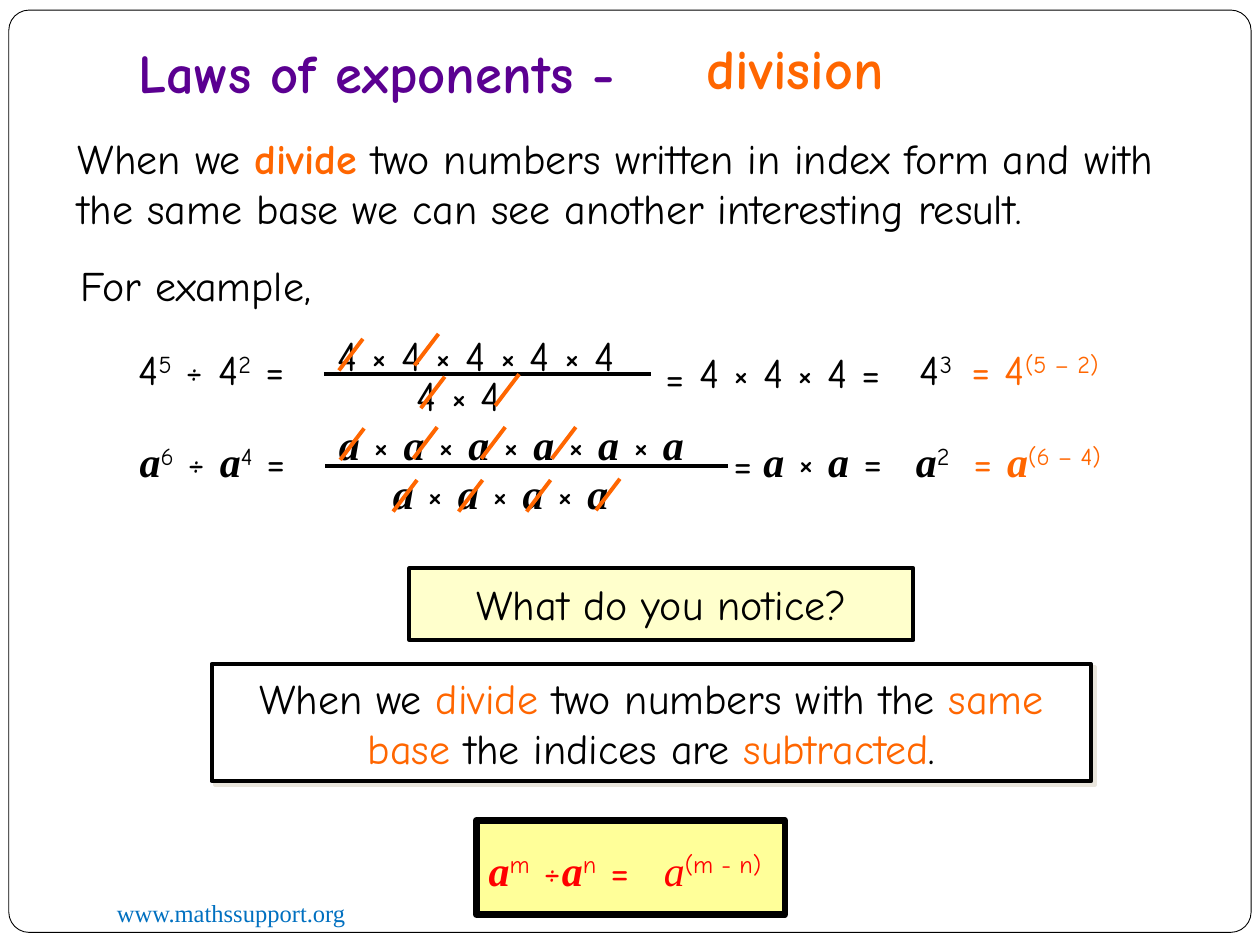
from lxml.etree import SubElement
from pptx import Presentation
from pptx.dml.color import RGBColor
from pptx.enum.shapes import MSO_CONNECTOR, MSO_SHAPE
from pptx.enum.text import MSO_ANCHOR, MSO_AUTO_SIZE, PP_ALIGN
from pptx.oxml.ns import qn
from pptx.util import Inches, Pt

BLACK = RGBColor(0x00, 0x00, 0x00)
WHITE = RGBColor(0xFF, 0xFF, 0xFF)
ORANGE = RGBColor(0xFF, 0x66, 0x00)
PURPLE = RGBColor(0x5B, 0x00, 0x91)
BLUE = RGBColor(0x00, 0x70, 0xC0)
RED = RGBColor(0xFF, 0x00, 0x00)
CREAM = RGBColor(0xFF, 0xFF, 0xCC)
YELLOW = RGBColor(0xFF, 0xFF, 0x99)
SANS, SERIF = "Comic Neue", "Times New Roman"


def add_run(par, text, color=BLACK, size=24, bold=False, face=SANS):
    run = par.add_run()
    run.text = text
    font = run.font
    font.name, font.size, font.bold = face, Pt(size), bold
    font.color.rgb = color
    return run


def add_math(par, code, color, bold=True):
    """Split code at | into runs: ^ raises a part, a lone a is a variable."""
    for part in code.split("|"):
        run = add_run(par, part.lstrip("^"), color)
        if part.startswith("^"):
            run.font._element.set("baseline", "30000")
        elif part == "a":
            run.font.name, run.font.italic, run.font.bold = SERIF, True, bold


prs = Presentation()
prs.slide_width, prs.slide_height = Inches(10), Inches(7.5)
slide = prs.slides.add_slide(prs.slide_layouts[5])
shapes = slide.shapes

# Title
title = shapes.title
title.left, title.top = Inches(1), Inches(0.3)
title.width, title.height = Inches(8.5), Inches(0.65)
frame = title.text_frame
frame.auto_size = MSO_AUTO_SIZE.NONE
frame.vertical_anchor = MSO_ANCHOR.MIDDLE
frame.margin_bottom = Inches(0.1)
par = frame.paragraphs[0]
par.alignment, par.line_spacing = PP_ALIGN.LEFT, 0.9
add_run(par, "Laws of exponents -", PURPLE, 31.2, True)

# Panels: kind, left, top, width, height, fill, line width, runs
panels = [
    (MSO_SHAPE.ROUNDED_RECTANGLE, 0.07, 0.08, 9.86, 7.32, WHITE, 0.5, []),
    (MSO_SHAPE.RECTANGLE, 3.25, 4.51, 4, 0.57, CREAM, 2.25,
     [("What do you notice?", BLACK)]),
    (MSO_SHAPE.RECTANGLE, 1.68, 5.27, 6.98, 0.93, WHITE, 2.25,
     [("When we ", BLACK), ("divide", ORANGE),
      (" two numbers with the ", BLACK), ("same base", ORANGE),
      (" the indices are ", BLACK), ("subtracted", ORANGE), (".", BLACK)]),
    (MSO_SHAPE.RECTANGLE, 3.78, 6.51, 2.45, 0.75, YELLOW, 3.75, []),
]
boxes = []
for kind, left, top, width, height, fill, line, runs in panels:
    box = shapes.add_shape(kind, Inches(left), Inches(top),
                           Inches(width), Inches(height))
    box.shadow.inherit = False
    box.fill.solid()
    box.fill.fore_color.rgb = fill
    box.line.color.rgb = BLACK
    box.line.width = Pt(line)
    par = box.text_frame.paragraphs[0]
    par.alignment = PP_ALIGN.CENTER
    for text, color in runs:
        add_run(par, text, color)
    boxes.append(box)

border, ask, law, rule = boxes
border.adjustments[0] = 0.022
title._element.addprevious(border._element)
shade = SubElement(law._element.spPr.find(qn("a:effectLst")),
                   qn("a:outerShdw"), blurRad="0", dist=str(Pt(2.8)),
                   dir="2700000", algn="ctr", rotWithShape="0")
SubElement(shade, qn("a:srgbClr"), val="E9E5DC")

# Plain text: left, top, width, height, wrap, runs
notes = [
    (0.83, 7.08, 3.25, 0.34, True,
     [("www.mathssupport.org", BLUE, 14, False, SERIF)]),
    (5.51, 0.22, 3.4, 0.64, True, [("division", ORANGE, 32, True)]),
    (0.52, 1, 9.27, 0.91, True,
     [("When we ",), ("divide", ORANGE, 24, True),
      (" two numbers written in index form and with the same base"
       " we can see another interesting result.",)]),
    (0.54, 2.01, 2.21, 0.5, False, [("For example,",)]),
]
for left, top, width, height, wrap, runs in notes:
    box = shapes.add_textbox(Inches(left), Inches(top),
                             Inches(width), Inches(height))
    box.text_frame.word_wrap = wrap
    for run in runs:
        add_run(box.text_frame.paragraphs[0], *run)

# Maths: left, top, width, code, colour
times = "| × |"
terms = [
    (1, 2.68, 1.52, "4|^5| ÷ 4|^2| =", BLACK),
    (2.58, 2.57, 2.67, " × ".join("4" * 5), BLACK),
    (3.21, 2.88, 0.97, "4 × 4", BLACK),
    (5.18, 2.73, 0.37, "=", BLACK),
    (5.45, 2.7, 1.81, "4 × 4 × 4 =", BLACK),
    (7.2, 2.68, 0.54, "4|^3", BLACK),
    (7.61, 2.68, 1.35, "= 4|^(5 – 2)", ORANGE),
    (1.01, 3.41, 1.44, "a|^6| ÷ |a|^4| =", BLACK),
    (2.59, 3.27, 3.09, times.join("a" * 6), BLACK),
    (3.02, 3.66, 1.99, times.join("a" * 4), BLACK),
    (5.72, 3.42, 0.37, "=", BLACK),
    (5.96, 3.41, 1.17, "a| × |a| =", BLACK),
    (7.17, 3.41, 0.51, "a|^2", BLACK),
    (7.63, 3.41, 1.35, "= |a|^(6 – 4)", ORANGE),
    (3.78, 6.65, 1.36, "a|^m| ÷|a|^n| =", RED),
    (5.17, 6.65, 1.06, "a|^(m - n)", RED),
]
for left, top, width, code, color in terms:
    box = shapes.add_textbox(Inches(left), Inches(top),
                             Inches(width), Inches(0.5))
    box.text_frame.word_wrap = False
    # The variable in the final power is the only light one
    add_math(box.text_frame.paragraphs[0], code, color,
             bold=code != "a|^(m - n)")

# Fraction bars, then the strokes that cancel factors
lines = [(2.57, 2.97, 5.17, 2.97, BLACK), (2.58, 3.7, 5.78, 3.7, BLACK)]
strokes = [
    (2.69, 2.94), (3.29, 2.9), (3.34, 3.24), (3.93, 3.22),
    (2.7, 3.65), (3.28, 3.64), (3.82, 3.64), (4.38, 3.64),
    (3.12, 4.06), (3.64, 4.06), (4.18, 4.06), (4.73, 4.05),
]
lines += [(x, y, x + 0.19, y - 0.25, ORANGE) for x, y in strokes]
for x1, y1, x2, y2, color in lines:
    line = shapes.add_connector(MSO_CONNECTOR.STRAIGHT, Inches(x1),
                                Inches(y1), Inches(x2), Inches(y2))
    line.line.color.rgb = color
    line.line.width = Pt(2.25)
    SubElement(line._element.spPr, qn("a:effectLst"))

prs.save("out.pptx")
